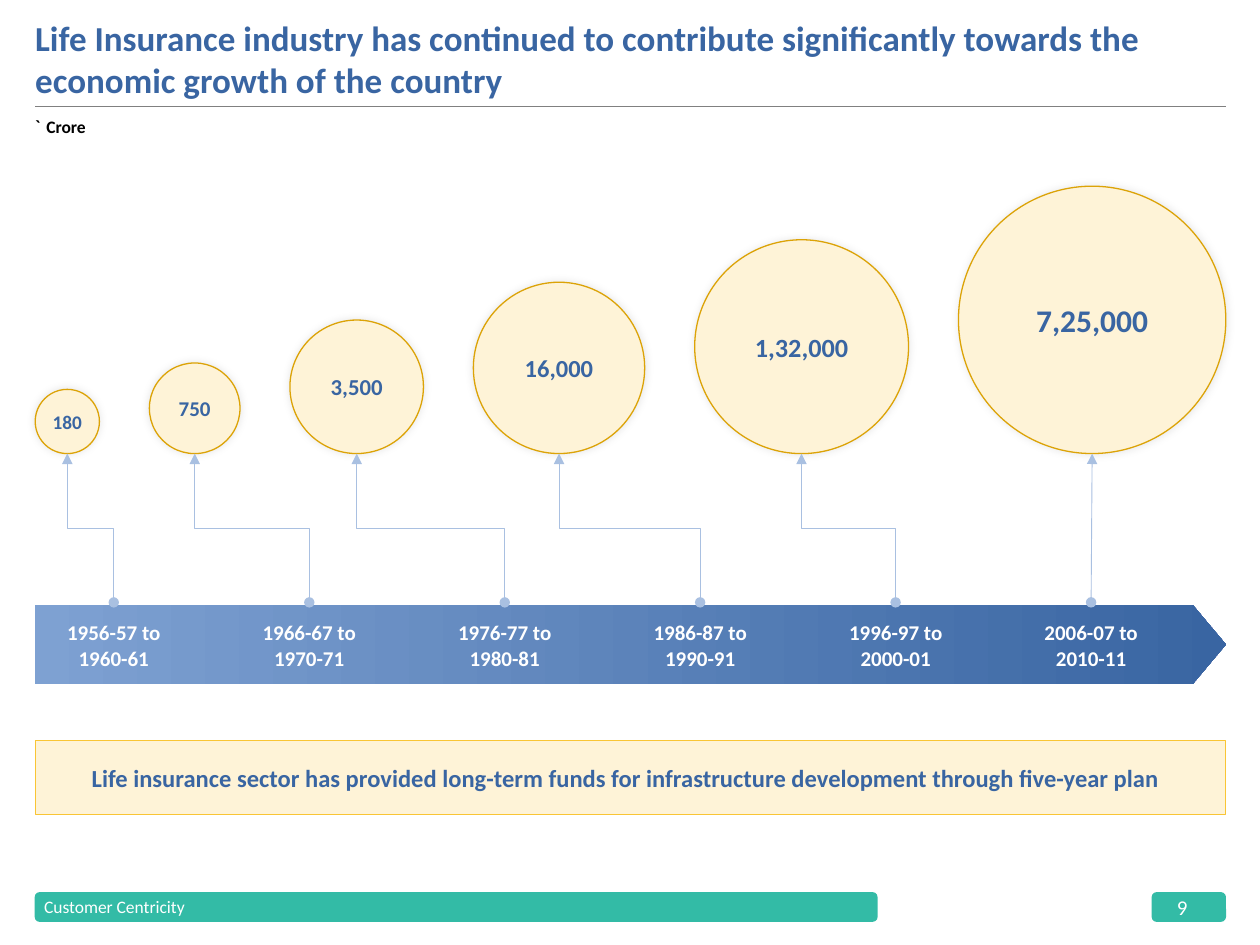
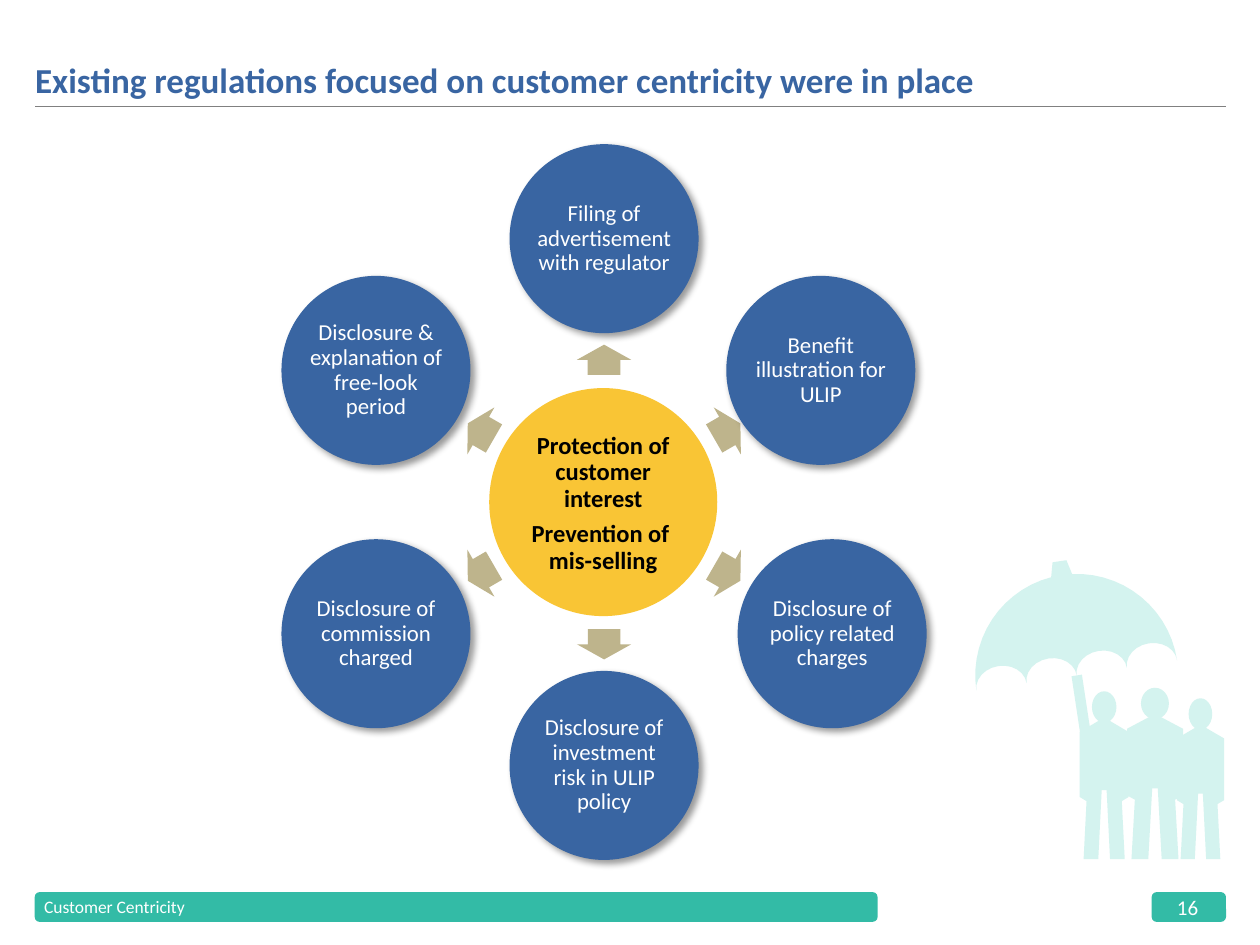
from math import cos, radians, sin

from pptx import Presentation
from pptx.dml.color import RGBColor
from pptx.enum import shapes, text
from pptx.oxml import parse_xml
from pptx.oxml.ns import nsdecls, qn
from pptx.util import Pt

# Content
FOOTER = "Customer Centricity"
GROWTH_TITLE = ("Life Insurance industry has continued to contribute significantly "
                "towards the economic growth of the country")
# Period, amount, circle diameter, text size
PERIODS = [
    ("1956-57 to 1960-61", "180", 36.7, 11),
    ("1966-67 to 1970-71", "750", 51.8, 12),
    ("1976-77 to 1980-81", "3,500", 76.3, 13),
    ("1986-87 to 1990-91", "16,000", 97.9, 14),
    ("1996-97 to 2000-01", "1,32,000", 122.2, 15),
    ("2006-07 to 2010-11", "7,25,000", 152.8, 18),
]
GROWTH_MESSAGE = ("Life insurance sector has provided long-term funds for "
                  "infrastructure development through five-year plan")
RULES_TITLE = "Existing regulations focused on customer centricity were in place"
AIMS = ["Protection of customer interest", "Prevention of \vmis-selling"]
# Regulation and sideways nudge, clockwise from the top
REGULATIONS = [
    ("Filing of advertisement with regulator", 0),
    ("Benefit illustration for ULIP", -6.5),
    ("Disclosure of policy related charges", 0),
    ("Disclosure of investment risk in ULIP policy", 0),
    ("Disclosure of commission charged", 0),
    ("Disclosure & explanation of free-look period", 0),
]
# Family members: centre, neck height, body width
FAMILY = [(631, 412, 28), (660, 410, 32), (686, 416, 27)]
# Right half of a body, as shares of its width and height
BODY_HALF = [(0.12, 0), (0.5, 0.08), (0.5, 0.55), (0.36, 0.58), (0.42, 1),
             (0.12, 1), (0.05, 0.5)]

# Shared style
FONT = "Calibri"
BLUE, LIGHT_BLUE, PALE_BLUE = "3965A2", "7EA1D2", "A9C0E1"
TEAL, MINT, GREY, SAND = "33BBA6", "D4F3EF", "808080", "BEB48C"
GOLD, DARK_GOLD, CREAM = "F9C535", "DCA307", "FEF3D7"
WHITE, BLACK = "FFFFFF", "000000"
LEFT, WIDTH = 20.1, 680.4
CENTER = text.PP_ALIGN.CENTER
MIDDLE, TOP, BOTTOM = (text.MSO_ANCHOR.MIDDLE, text.MSO_ANCHOR.TOP,
                       text.MSO_ANCHOR.BOTTOM)
KIND = shapes.MSO_SHAPE


def color(hex_string):
    return RGBColor.from_string(hex_string)


def write(shape, content, size, ink, bold=False, align=text.PP_ALIGN.LEFT,
          anchor=MIDDLE, insets=(0, 0, 0, 0), spacing=1.0, after=0):
    """Fill a shape with one paragraph, or with a list of them."""
    frame = shape.text_frame
    frame.word_wrap = True
    frame.auto_size = text.MSO_AUTO_SIZE.NONE
    frame.vertical_anchor = anchor
    (frame.margin_left, frame.margin_top,
     frame.margin_right, frame.margin_bottom) = map(Pt, insets)
    lines = [content] if isinstance(content, str) else content
    for number, line in enumerate(lines):
        paragraph = frame.add_paragraph() if number else frame.paragraphs[0]
        paragraph.text = line
        paragraph.alignment = align
        paragraph.line_spacing = spacing
        paragraph.space_after = Pt(after if number < len(lines) - 1 else 0)
        for run in paragraph.runs:
            run.font.name, run.font.size, run.font.bold = FONT, Pt(size), bold
            run.font.color.rgb = color(ink)


def add_box(slide, x, y, width, height, content, size, ink, **style):
    box = slide.shapes.add_textbox(Pt(x), Pt(y), Pt(width), Pt(height))
    write(box, content, size, ink, **style)
    return box


def paint(shape, fill, line=None):
    shape.shadow.inherit = False
    shape.fill.solid()
    shape.fill.fore_color.rgb = color(fill)
    if line:
        shape.line.color.rgb = color(line)
        shape.line.width = Pt(0.75)
    else:
        shape.line.fill.background()


def add_shape(slide, kind, x, y, width, height, fill, line=None):
    shape = slide.shapes.add_shape(kind, Pt(x), Pt(y), Pt(width), Pt(height))
    paint(shape, fill, line)
    return shape


def add_circle(slide, center_x, center_y, diameter, fill, line=None):
    return add_shape(slide, KIND.OVAL, center_x - diameter / 2, center_y - diameter / 2,
                     diameter, diameter, fill, line)


def add_shadow(shape, opacity, blur, distance, angle):
    effects = shape._element.spPr.find(qn("a:effectLst"))
    effects.append(parse_xml(
        f'<a:outerShdw {nsdecls("a")} blurRad="{Pt(blur)}" dist="{Pt(distance)}" '
        f'dir="{angle * 60000}" algn="ctr" rotWithShape="0"><a:srgbClr val="{BLACK}">'
        f'<a:alpha val="{opacity * 1000}"/></a:srgbClr></a:outerShdw>'))


def add_line(slide, begin, end, ink, kind=shapes.MSO_CONNECTOR.STRAIGHT):
    line = slide.shapes.add_connector(kind, *map(Pt, begin + end))
    line.line.color.rgb = color(ink)
    line.line.width = Pt(0.5)
    line._element.spPr.append(parse_xml(f'<a:effectLst {nsdecls("a")}/>'))
    return line


def add_link(slide, top_x, top_y, bottom_x, bottom_y):
    """Arrow up to a circle from a dot, bent halfway unless almost upright."""
    shift, length = bottom_x - top_x, bottom_y - top_y
    if abs(shift) < 2:
        link = add_line(slide, (top_x, top_y), (bottom_x, bottom_y), PALE_BLUE)
    else:
        middle_x, middle_y = (top_x + bottom_x) / 2, (top_y + bottom_y) / 2
        link = add_line(slide, (middle_x + length / 2, middle_y - shift / 2),
                        (middle_x - length / 2, middle_y + shift / 2),
                        PALE_BLUE, shapes.MSO_CONNECTOR.ELBOW)
        link._element.spPr.find(qn("a:xfrm")).set("rot", str(270 * 60000))
    outline = link._element.spPr.find(qn("a:ln"))
    for tag, end_type in (("headEnd", "triangle"), ("tailEnd", "oval")):
        outline.append(parse_xml(f'<a:{tag} {nsdecls("a")} type="{end_type}"/>'))


def add_outline(slide, points, fill):
    points = [(Pt(x), Pt(y)) for x, y in points]
    builder = slide.shapes.build_freeform(*points[0], scale=1.0)
    builder.add_line_segments(points[1:], close=True)
    paint(builder.convert_to_shape(), fill)


def arc(center_x, radius_x, radius_y, angles):
    return [(center_x + radius_x * cos(radians(angle)), radius_y * sin(radians(angle)))
            for angle in angles]


def add_umbrella(slide, center_x, center_y, radius, tilt, scallops=4):
    """One outline: dome, scalloped edge and stick, tilted about the centre."""
    scallop = radius / scallops
    dome = arc(0, radius, radius, range(180, 361, 6))
    tip = [(-4, -radius - 8), (4, -radius - 8)]
    half = len(dome) // 2
    outline = dome[:half] + tip + dome[half + 1:]
    for index in range(scallops):
        if index == scallops // 2:
            outline += [(3, 0), (3, 42), (-3, 42), (-3, 0)]
        outline += arc(radius - scallop * (2 * index + 1), scallop, 12,
                       range(360, 179, -15))
    across, down = cos(radians(tilt)), sin(radians(tilt))
    add_outline(slide, [(center_x + x * across - y * down, center_y + x * down + y * across)
                        for x, y in outline], MINT)


def add_person(slide, center_x, neck, width, feet=491):
    half = [(share * width, neck + depth * (feet - neck)) for share, depth in BODY_HALF]
    add_outline(slide, [(center_x + x, y) for x, y in half]
                + [(center_x - x, y) for x, y in reversed(half)], MINT)
    head_width, head_height = width / 2, 18
    add_shape(slide, KIND.OVAL, center_x - head_width / 2, neck - head_height + 1,
              head_width, head_height, MINT)


def add_slide(presentation, title, number):
    """Slide with title, rule, footer band and page number."""
    slide = presentation.slides.add_slide(presentation.slide_layouts[5])
    heading = slide.shapes.title
    heading.left, heading.top, heading.width, heading.height = map(
        Pt, (LEFT, 6.5, WIDTH, 51.1))
    write(heading, title, 20, BLUE, bold=True, anchor=BOTTOM)
    add_line(slide, (LEFT, 61), (LEFT + WIDTH, 61), GREY)
    for x, width, label, size, inset in ((19.8, 481.7, FOOTER, 10, 4.6),
                                         (658.1, 42.5, number, 12, 13.6)):
        band = add_shape(slide, KIND.ROUNDED_RECTANGLE, x, 509.8, width, 17, TEAL)
        write(band, label, size, WHITE, insets=(inset, 0, 0, 0))
    return slide


def build_growth(presentation):
    slide = add_slide(presentation, GROWTH_TITLE, "9")
    unit = add_box(slide, LEFT, 66.2, 73.4, 12.2, "` ", 10, BLACK, bold=True,
                   anchor=BOTTOM)
    paragraph = unit.text_frame.paragraphs[0]
    paragraph.runs[0].font.name = "Lato"
    crore = paragraph.add_run()
    crore.text = "Crore"
    crore.font.name, crore.font.size, crore.font.bold = FONT, Pt(10), True
    crore.font.color.rgb = color(BLACK)

    # Timeline arrow
    timeline = add_shape(slide, KIND.PENTAGON, LEFT, 345.6, WIDTH, 45.4, BLUE)
    timeline.adjustments[0] = 0.42
    timeline.fill.gradient()
    timeline.fill.gradient_angle = 0
    for stop, shade in zip(timeline.fill.gradient_stops, (LIGHT_BLUE, BLUE)):
        stop.color.rgb = color(shade)

    # Circles share a base line and equal gaps
    base, dot_y, label_width = 259.2, 344.2, 57
    gap = (WIDTH - sum(period[2] for period in PERIODS)) / (len(PERIODS) - 1)
    x = LEFT
    for index, (period, amount, diameter, size) in enumerate(PERIODS):
        circle_x, label_x = x + diameter / 2, 65 + 111.7 * index
        circle = add_circle(slide, circle_x, base - diameter / 2, diameter,
                            CREAM, DARK_GOLD)
        add_shadow(circle, 10, 5, 0, 0)
        write(circle, amount, size, BLUE, bold=True, align=CENTER)
        add_box(slide, label_x - label_width / 2, 354.2, label_width, 29, period,
                12, WHITE, bold=True, align=CENTER, anchor=TOP)
        add_link(slide, circle_x, base, label_x, dot_y)
        x += diameter + gap

    # Message
    banner = add_shape(slide, KIND.RECTANGLE, LEFT, 423.2, WIDTH, 42.2, CREAM, GOLD)
    write(banner, GROWTH_MESSAGE, 14, BLUE, bold=True, align=CENTER,
          insets=(4.5, 4.5, 10, 4.5))


def build_rules(presentation):
    slide = add_slide(presentation, RULES_TITLE, "16")
    center_x, center_y = 345.2, 286.9
    hub = add_circle(slide, center_x - 0.5, center_y, 130.3, GOLD)
    write(hub, AIMS, 14, BLACK, bold=True, align=CENTER, spacing=0.9, after=4.9,
          insets=(0, 2, 0, 0))

    # Ring of arrows and regulations
    ring, arrow_ring, box_width, box_height = 150.5, 81.3, 80, 75.6
    arrow_width, arrow_height = 17.3, 31
    for index, (regulation, nudge) in enumerate(REGULATIONS):
        angle = -90 + index * 360 / len(REGULATIONS)
        across, down = cos(radians(angle)), sin(radians(angle))
        arrow = add_shape(slide, KIND.RIGHT_ARROW,
                          center_x + arrow_ring * across - arrow_width / 2,
                          center_y + arrow_ring * down - arrow_height / 2,
                          arrow_width, arrow_height, SAND)
        arrow.adjustments[0], arrow.adjustments[1] = 0.6, 0.5
        arrow.rotation = angle % 360
        x, y = center_x + ring * across + nudge, center_y + ring * down
        add_shadow(add_circle(slide, x, y, 108, BLUE), 40, 4, 3, 45)
        add_box(slide, x - box_width / 2, y - box_height / 2, box_width, box_height,
                regulation, 13, WHITE, align=CENTER, spacing=0.9)

    # Family under an umbrella
    add_umbrella(slide, 615.3, 386, 58, -8.6)
    for person in FAMILY:
        add_person(slide, *person)


def main():
    presentation = Presentation()
    presentation.slide_width, presentation.slide_height = Pt(720), Pt(540)
    build_growth(presentation)
    build_rules(presentation)
    presentation.save("out.pptx")


if __name__ == "__main__":
    main()
